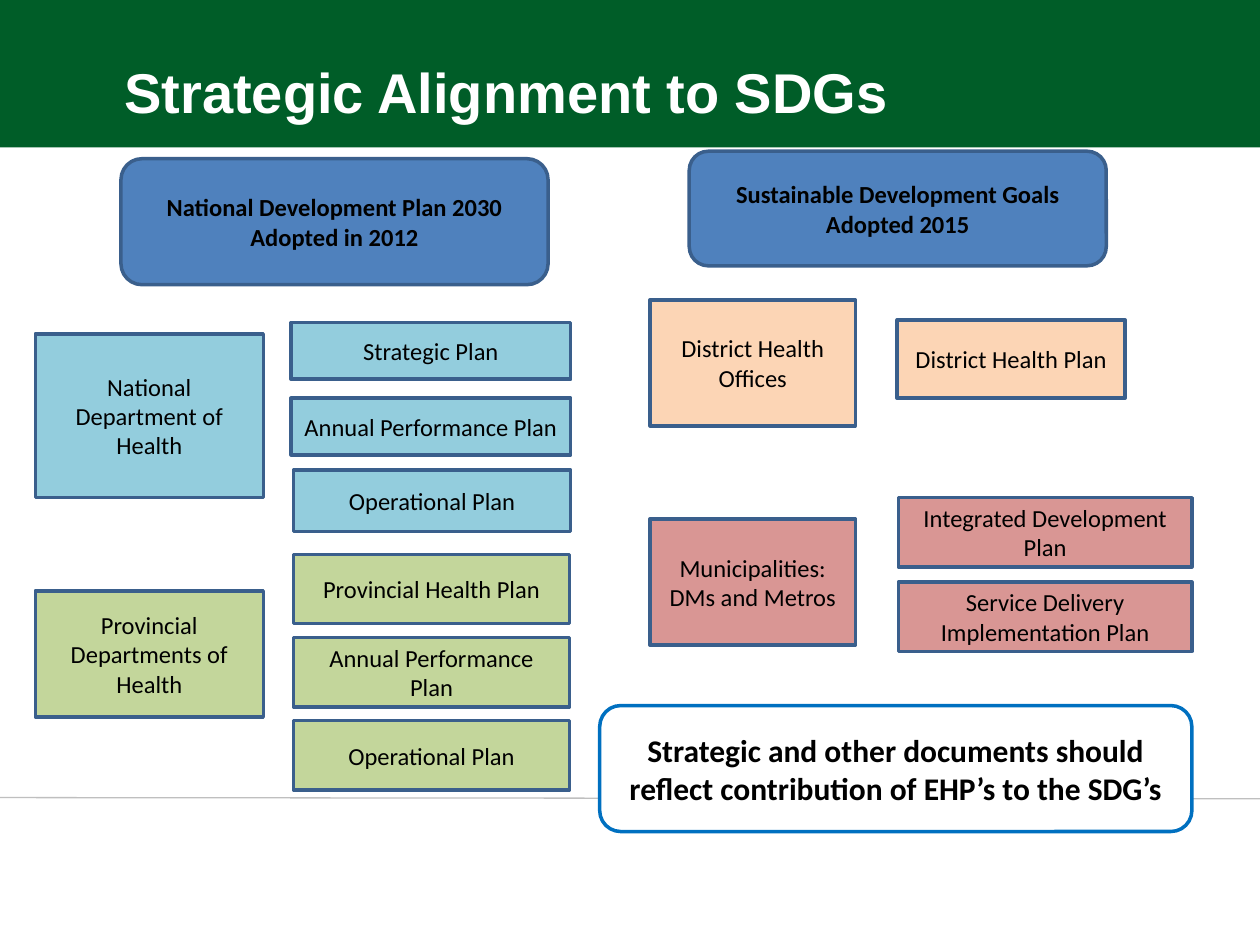
from dataclasses import dataclass

from lxml.etree import SubElement
from pptx import Presentation
from pptx.dml.color import RGBColor
from pptx.enum.shapes import MSO_CONNECTOR, MSO_SHAPE
from pptx.enum.text import MSO_ANCHOR, PP_ALIGN
from pptx.oxml.ns import qn
from pptx.util import Inches, Pt

COLORS = {
    "band": "005D28", "rule": "BFBFBF", "edge": "3A5F8C", "frame": "0070C0",
    "goal": "4F81BD", "nation": "93CDDD", "province": "C3D69B",
    "district": "FCD5B5", "city": "D99694", "white": "FFFFFF", "black": "000000",
}


@dataclass
class Box:
    text: str
    left: float
    top: float
    width: float
    height: float
    fill: str
    edge: str = "edge"
    size: int = 14
    bold: bool = False
    round: bool = False


def stack(names: list[str], left: float, top: float, step: float,
          width: float, height: float, fill: str) -> list[Box]:
    """Place equal boxes below one another."""
    return [Box(name, left, top + i * step, width, height, fill)
            for i, name in enumerate(names)]


HEADS = [
    Box("National Development Plan 2030\nAdopted in 2012",
        0.96, 1.26, 3.39, 1, "goal", bold=True, round=True),
    Box("Sustainable Development Goals\nAdopted 2015",
        5.47, 1.2, 3.31, 0.91, "goal", bold=True, round=True),
]
BODIES = [
    Box("National Department of Health", 0.28, 2.65, 1.81, 1.3, "nation"),
    Box("Provincial Departments of Health", 0.28, 4.69, 1.81, 1, "province"),
    Box("District Health Offices", 5.16, 2.38, 1.63, 1, "district"),
    Box("Municipalities: DMs and Metros", 5.16, 4.12, 1.63, 1, "city"),
]
PLANS = [
    *stack(["Strategic Plan", "Annual Performance Plan"],
           2.31, 2.56, 0.6, 2.22, 0.45, "nation"),
    Box("Operational Plan", 2.33, 3.73, 2.2, 0.49, "nation"),
    *stack(["Provincial Health Plan", "Annual Performance Plan", "Operational Plan"],
           2.33, 4.4, 0.66, 2.19, 0.55, "province"),
    Box("District Health Plan", 7.12, 2.54, 1.81, 0.62, "district"),
    *stack(["Integrated Development Plan", "Service Delivery Implementation Plan"],
           7.13, 3.95, 0.67, 2.33, 0.55, "city"),
]
CALL = Box("Strategic and other documents should reflect contribution of EHP’s to the SDG’s",
           4.76, 5.6, 4.7, 1, "white", "frame", 18, True, True)


def color(name: str) -> RGBColor:
    return RGBColor.from_string(COLORS[name])


def style(frame, anchor, tint: str, **font) -> None:
    """Centre the text of a frame and apply font values."""
    frame.word_wrap = True
    frame.vertical_anchor = anchor
    for para in frame.paragraphs:
        para.alignment = PP_ALIGN.CENTER
        for key, value in font.items():
            setattr(para.font, key, value)
        para.font.color.rgb = color(tint)


def draw_box(slide, box: Box) -> None:
    kind = MSO_SHAPE.ROUNDED_RECTANGLE if box.round else MSO_SHAPE.RECTANGLE
    place = map(Inches, (box.left, box.top, box.width, box.height))
    shape = slide.shapes.add_shape(kind, *place)
    shape.shadow.inherit = False
    shape.fill.solid()
    shape.fill.fore_color.rgb = color(box.fill)
    shape.line.color.rgb = color(box.edge)
    shape.line.width = Pt(2)
    shape.text_frame.text = box.text
    style(shape.text_frame, MSO_ANCHOR.MIDDLE, "black",
          name="Calibri", size=Pt(box.size), bold=box.bold)


def draw_base(slide) -> None:
    """Draw the title band and the footer rule."""
    band = slide.shapes.add_shape(MSO_SHAPE.RECTANGLE, 0, 0, Inches(10), Inches(1.17))
    band.shadow.inherit = False
    band.fill.solid()
    band.fill.fore_color.rgb = color("band")
    band.line.fill.background()
    rule = slide.shapes.add_connector(
        MSO_CONNECTOR.STRAIGHT, 0, Inches(6.33), Inches(10), Inches(6.34))
    rule.line.color.rgb = color("rule")
    rule.line.width = Pt(0.75)
    SubElement(rule.element.spPr, qn("a:effectLst"))


def draw_title(slide, text: str) -> None:
    title = slide.shapes.title
    place = {"left": 0.12, "top": -0.04, "width": 7.8, "height": 1.08}
    for key, value in place.items():
        setattr(title, key, Inches(value))
    title.text_frame.text = text
    style(title.text_frame, MSO_ANCHOR.BOTTOM, "white",
          name="Arial", size=Pt(32), bold=True)
    # Bring the title in front of the band
    title.element.getparent().append(title.element)


def main() -> None:
    deck = Presentation()
    deck.slide_width, deck.slide_height = Inches(10), Inches(7.5)
    slide = deck.slides.add_slide(deck.slide_layouts[5])
    draw_base(slide)
    draw_title(slide, "Strategic Alignment to SDGs")
    for box in [*HEADS, *BODIES, *PLANS, CALL]:
        draw_box(slide, box)
    deck.save("out.pptx")


if __name__ == "__main__":
    main()
